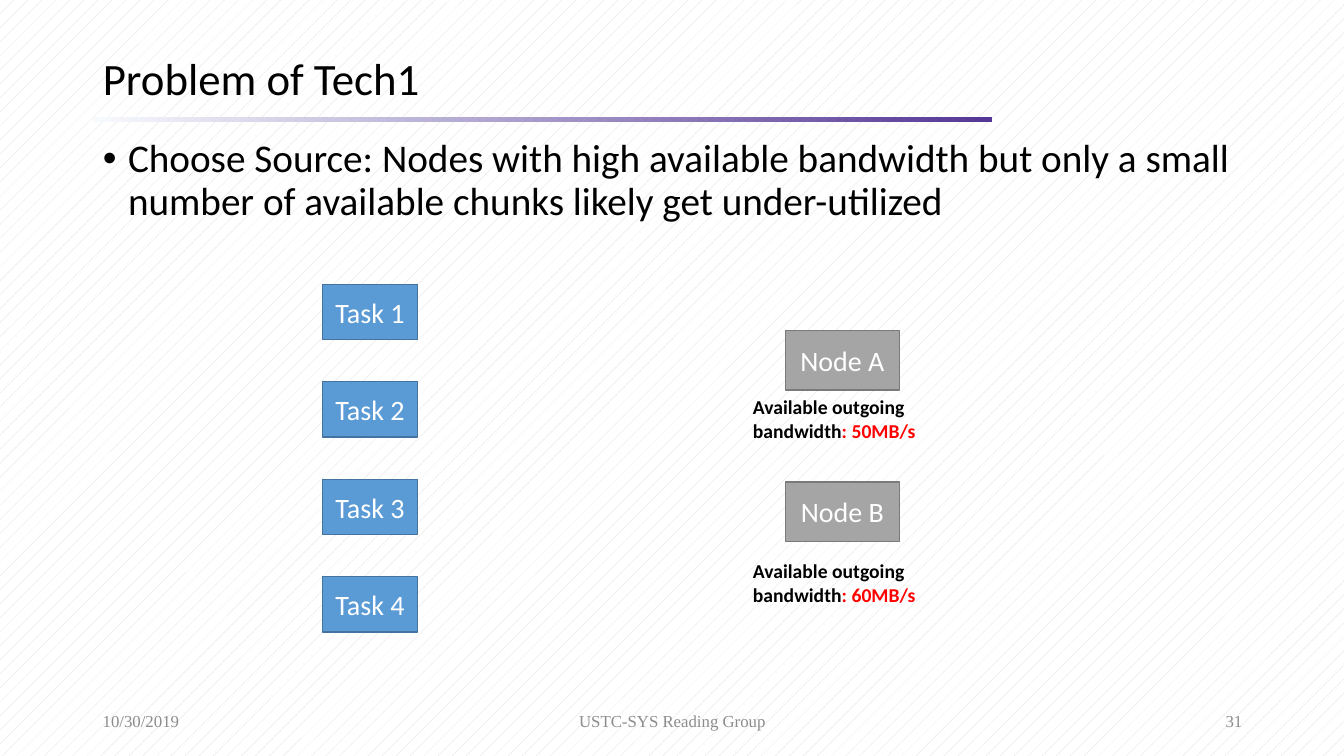
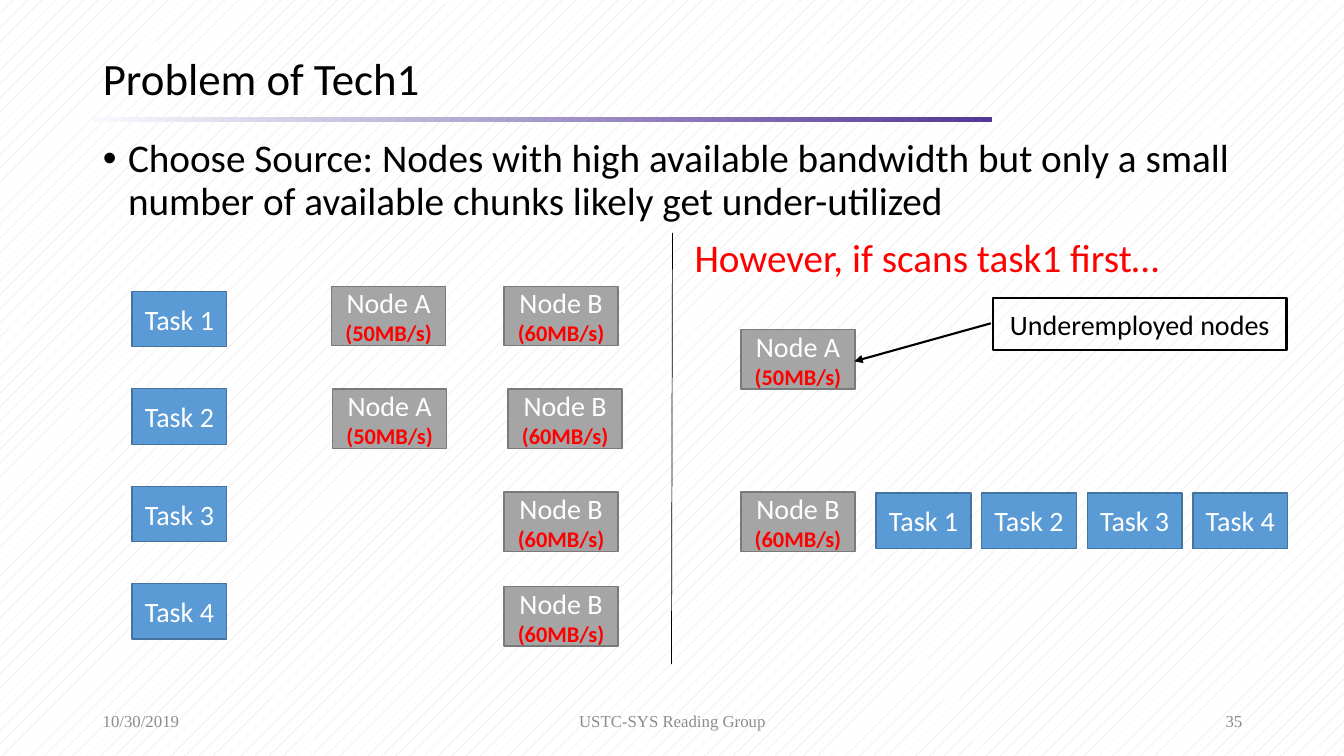
from lxml import etree
from pptx import Presentation
from pptx.dml.color import RGBColor
from pptx.enum.dml import MSO_PATTERN
from pptx.enum.shapes import MSO_CONNECTOR, MSO_SHAPE
from pptx.enum.text import MSO_ANCHOR, MSO_AUTO_SIZE, PP_ALIGN
from pptx.oxml.ns import qn
from pptx.util import Inches, Pt

RECT, CALLOUT = MSO_SHAPE.RECTANGLE, MSO_SHAPE.LINE_CALLOUT_1
STRAIGHT = MSO_CONNECTOR.STRAIGHT
LEFT, CENTER, RIGHT = PP_ALIGN.LEFT, PP_ALIGN.CENTER, PP_ALIGN.RIGHT
TOP, MIDDLE = MSO_ANCHOR.TOP, MSO_ANCHOR.MIDDLE
NO_FIT, GROW = MSO_AUTO_SIZE.NONE, MSO_AUTO_SIZE.SHAPE_TO_FIT_TEXT
DOTS = MSO_PATTERN.PERCENT_5

FONT, FOOT_FONT = "Calibri", "Times New Roman"
BLACK, WHITE, RED, FOOT = "000000", "FFFFFF", "FF0000", "8C8C8C"
TASK, TASK_EDGE = "5B9BD5", "43739E"
NODE, NODE_EDGE = "A5A5A5", "7A7A7A"
RULE_START, RULE_END, DOT = "F7FAFD", "543795", "D9D9D9"

MARGIN, CONTENT_W = 0.92, 11.5
TASK_W, TASK_H, TASK_PITCH = 0.94, 0.55, 0.967
NODE_W, NODE_H = 1.13, 0.59
SPEED = {"A": "50MB/s", "B": "60MB/s"}
TITLE = "Problem of Tech1"
POINT = ("Choose Source: Nodes with high available bandwidth but only a small "
         "number of available chunks likely get under-utilized")


def rgb(value):
    return RGBColor.from_string(value)


def place(sp, x, y, w, h):
    sp.left, sp.top, sp.width, sp.height = map(Inches, (x, y, w, h))


def style(p, size, color=BLACK, align=LEFT, font=FONT, bold=False):
    p.alignment = align
    p.font.size, p.font.name, p.font.bold = Pt(size), font, bold
    p.font.color.rgb = rgb(color)


def add_text(s, box, text, size, wrap=True, anchor=TOP, fit=GROW, **look):
    tf = s.shapes.add_textbox(*map(Inches, box)).text_frame
    tf.word_wrap, tf.auto_size, tf.vertical_anchor = wrap, fit, anchor
    p = tf.paragraphs[0]
    p.text = text
    style(p, size, **look)
    return p


def add_box(s, box, text, fill, edge, width=1, color=WHITE, kind=RECT):
    sp = s.shapes.add_shape(kind, *map(Inches, box))
    sp.shadow.inherit = False
    if fill:
        sp.fill.solid()
        sp.fill.fore_color.rgb = rgb(fill)
    else:
        sp.fill.background()
    sp.line.color.rgb = rgb(edge)
    sp.line.width = Pt(width)
    tf = sp.text_frame
    tf.vertical_anchor = MIDDLE
    p = tf.paragraphs[0]
    p.text = text
    style(p, 20, color, CENTER)
    return sp


def add_task(s, x, y, number):
    add_box(s, (x, y, TASK_W, TASK_H), f"Task {number}", TASK, TASK_EDGE)


def add_tasks(s, x, y, dx=0, dy=TASK_PITCH):
    for i in range(4):
        add_task(s, x + i * dx, y + i * dy, i + 1)


def add_node(s, x, y, name, with_speed=True):
    sp = add_box(s, (x, y, NODE_W, NODE_H), f"Node {name}", NODE, NODE_EDGE)
    if with_speed:
        p = sp.text_frame.add_paragraph()
        p.text = f"({SPEED[name]})"
        style(p, 16, RED, CENTER, bold=True)


def add_title_rule(s):
    rule = s.shapes.add_shape(RECT, *map(Inches, (MARGIN, 1.16, 8.92, 0.05)))
    rule.shadow.inherit = False
    rule.line.fill.background()
    rule.fill.gradient()
    rule.fill.gradient_angle = 0
    for stop, pos, color in zip(rule.fill.gradient_stops, (0, 1), (RULE_START, RULE_END)):
        stop.position = pos
        stop.color.rgb = rgb(color)


def add_footer(s, number):
    for x, w, text, align in ((MARGIN, 3, "10/30/2019", LEFT),
                              (4.42, 4.5, "USTC-SYS Reading Group", CENTER),
                              (9.42, 3, str(number), RIGHT)):
        add_text(s, (x, 6.95, w, 0.4), text, 12, anchor=MIDDLE, fit=NO_FIT,
                 color=FOOT, align=align, font=FOOT_FONT)


def add_base_slide(prs, number):
    s = prs.slides.add_slide(prs.slide_layouts[1])
    title, body = s.placeholders
    for sp, y, h, text, size, anchor in ((title, 0.43, 0.75, TITLE, 32, MIDDLE),
                                         (body, 1.33, 5.43, POINT, 28, TOP)):
        place(sp, MARGIN, y, CONTENT_W, h)
        tf = sp.text_frame
        tf.auto_size, tf.vertical_anchor = NO_FIT, anchor
        p = tf.paragraphs[0]
        p.text = text
        p.line_spacing, p.space_before = 0.9, Pt(0)
        style(p, size)
    pPr = body.text_frame.paragraphs[0]._p.get_or_add_pPr()
    pPr.set("marL", str(Inches(0.25)))
    pPr.set("indent", str(Inches(-0.25)))
    add_title_rule(s)
    add_footer(s, number)
    return s


def add_bandwidth(s, x, y, name):
    p = add_text(s, (x, y, 1.97, 0.57), "Available outgoing bandwidth", 14, bold=True)
    r = p.add_run()
    r.text = f": {SPEED[name]}"
    r.font.color.rgb = rgb(RED)


def add_sources(s, x, y):
    for name, node_y, label_y in (("A", 0, 0.59), ("B", 1.5, 2.22)):
        add_node(s, x + 0.42, y + node_y, name, with_speed=False)
        add_bandwidth(s, x, y + label_y, name)


def add_candidates(s, x, y):
    add_tasks(s, x, y + 0.05)
    for dx, dy, name in ((1.98, 0, "A"), (3.69, 0, "B"),
                         (1.99, 1.02, "A"), (3.73, 1.02, "B"),
                         (3.69, 2.04, "B"), (3.69, 2.98, "B")):
        add_node(s, x + dx, y + dy, name)


def add_divider(s, x, y, h):
    line = s.shapes.add_connector(STRAIGHT, *map(Inches, (x, y, x - 0.01, y + h)))
    line.line.color.rgb = rgb(BLACK)
    line.line.width = Pt(0.5)
    etree.SubElement(line._element.spPr, qn("a:effectLst"))


def add_callout(s, box, text):
    sp = add_box(s, box, text, None, BLACK, 1.5, BLACK, CALLOUT)
    for i, value in enumerate((0.486, -0.008, 1.226, -0.473)):
        sp.adjustments[i] = value
    etree.SubElement(sp.line._get_or_add_ln(), qn("a:tailEnd"), type="triangle")


def add_assignment(s, x, y):
    add_text(s, (x, y, 4.98, 0.57), "However, if scans task1 first…", 28,
             wrap=False, color=RED)
    add_node(s, x + 0.56, y + 1, "A")
    add_node(s, x + 0.56, y + 2.61, "B")
    add_tasks(s, x + 1.9, y + 2.62, dx=1.047, dy=0)
    add_callout(s, (x + 3.06, y + 0.69, 2.91, 0.51), "Underemployed nodes")


def main():
    prs = Presentation()
    prs.slide_width, prs.slide_height = Inches(13.33), Inches(7.5)
    fill = prs.slide_master.background.fill
    fill.patterned()
    fill.pattern = DOTS
    fill.fore_color.rgb, fill.back_color.rgb = rgb(DOT), rgb(WHITE)

    s = add_base_slide(prs, 31)
    add_tasks(s, 3.2, 2.82)
    add_sources(s, 7.37, 3.28)

    s = add_base_slide(prs, 35)
    add_candidates(s, 1.31, 2.84)
    add_divider(s, 6.67, 2.31, 4.28)
    add_assignment(s, 6.79, 2.27)

    prs.save("out.pptx")


if __name__ == "__main__":
    main()
